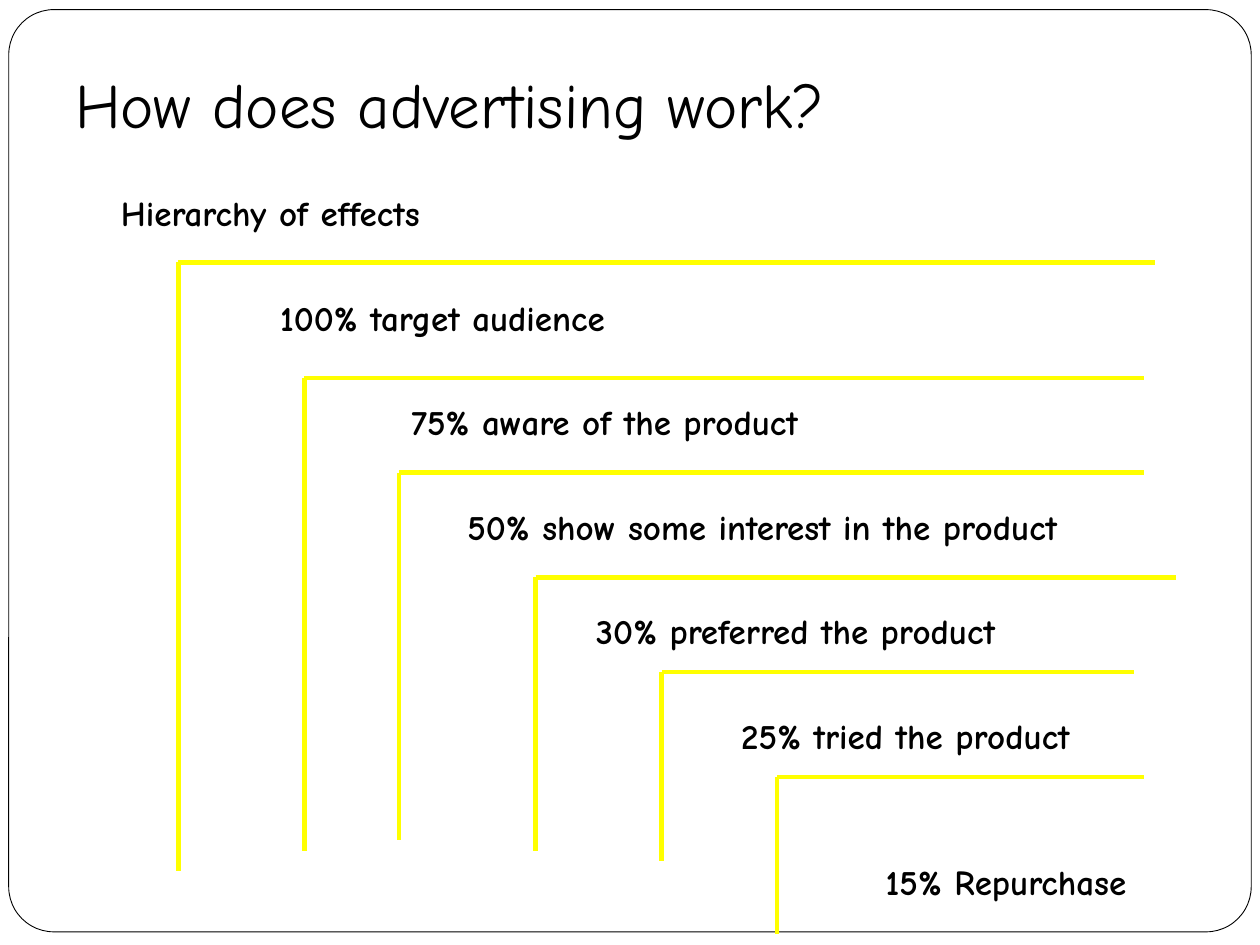
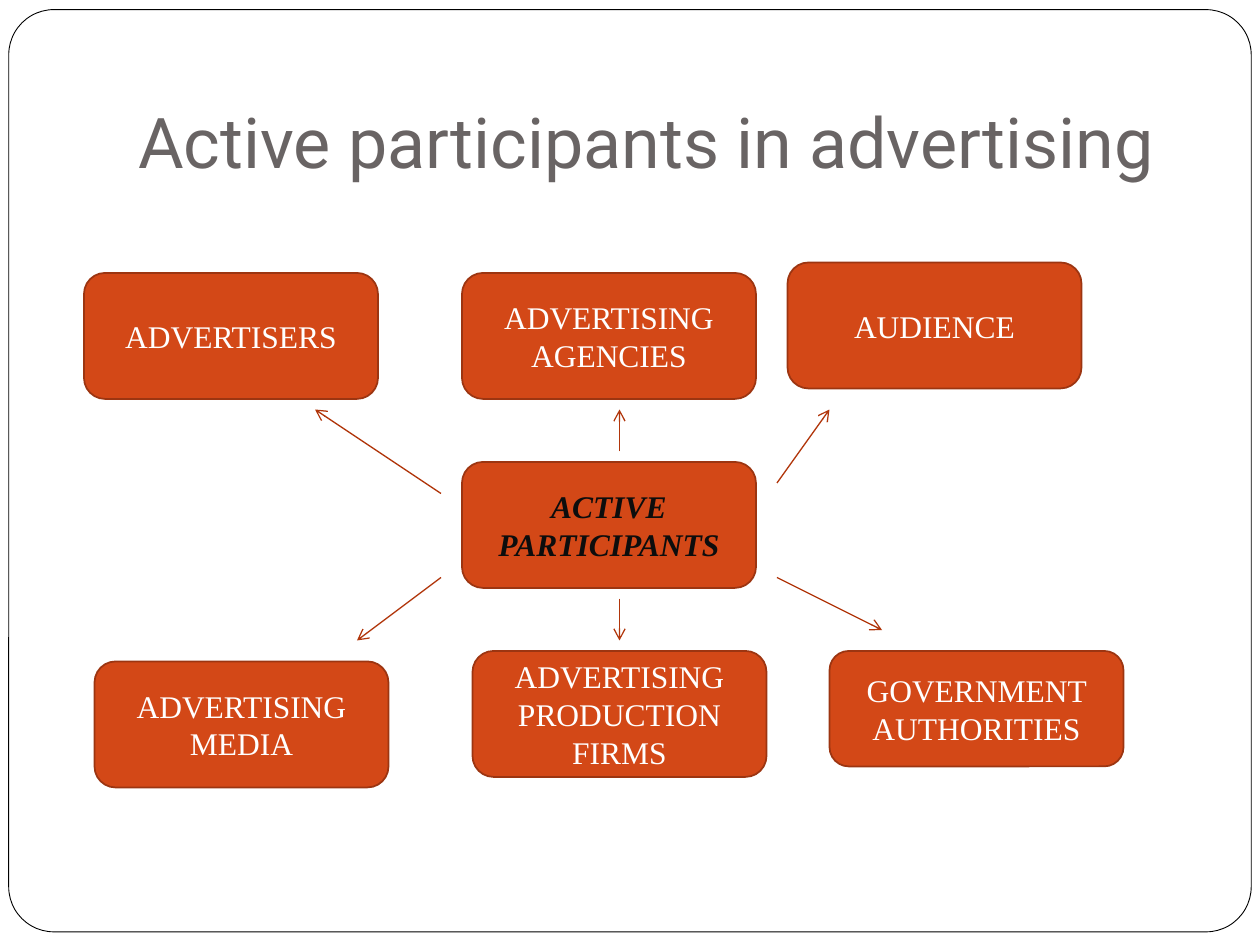
"""Build two slides on how advertising works and who takes part in it."""
from dataclasses import dataclass

from lxml import etree
from pptx import Presentation
from pptx.dml.color import RGBColor
from pptx.enum.shapes import MSO_CONNECTOR, MSO_SHAPE
from pptx.enum.text import MSO_ANCHOR, PP_ALIGN
from pptx.oxml.ns import qn
from pptx.shapes.autoshape import Shape
from pptx.shapes.connector import Connector
from pptx.slide import Slide
from pptx.text.text import Font
from pptx.util import Pt

STRAIGHT = MSO_CONNECTOR.STRAIGHT
ROUNDED = MSO_SHAPE.ROUNDED_RECTANGLE
BOTTOM, MIDDLE = MSO_ANCHOR.BOTTOM, MSO_ANCHOR.MIDDLE
CENTER = PP_ALIGN.CENTER


@dataclass(frozen=True)
class Theme:
    """Colours, fonts and type sizes of both slides."""
    paper: str = "FFFFFF"
    ink: str = "000000"
    heading: str = "696464"
    step: str = "FFFF00"
    box: str = "D34817"
    box_edge: str = "9C3511"
    arrow: str = "B1360B"
    hub_text: str = "0D0D0D"
    hand_font: str = "Comic Neue"
    heading_font: str = "Roboto"
    box_font: str = "Times New Roman"
    hand_title_size: float = 36
    heading_size: float = 40
    stage_size: float = 20
    box_size: float = 18


@dataclass(frozen=True)
class Stage:
    """A line of the hierarchy: wording, indent and gap above."""
    text: str
    indent: float
    gap: float = 35.7


@dataclass(frozen=True)
class Step:
    """A corner with a riser going down and a tread going right."""
    left: float
    top: float
    right: float
    bottom: float


@dataclass(frozen=True)
class Participant:
    """A box of the participants diagram."""
    text: str
    left: float
    top: float
    height: float = 72


@dataclass(frozen=True)
class Arrow:
    """An arrow from the hub towards a participant."""
    x1: float
    y1: float
    x2: float
    y2: float


THEME = Theme()
SLIDE_WIDTH, SLIDE_HEIGHT = 720, 540
BOX_WIDTH = 168
STAGE_LINE = 24

STAGES = (
    Stage("Hierarchy of effects", 5, 0),
    Stage("100% target audience", 96),
    Stage("75% aware of the product", 171),
    Stage("50% show some interest in the product", 203),
    Stage("30% preferred the product", 276.5),
    Stage("25% tried the product", 359.5),
    Stage("15% Repurchase", 442, 59.4),
)
STEPS = (
    Step(102, 150, 660, 498),
    Step(174, 216, 654, 486),
    Step(228, 270, 654, 480),
    Step(306, 330, 672, 486),
    Step(378, 384, 648, 492),
    Step(444, 444, 654, 534),
)
HUB = Participant("ACTIVE PARTICIPANTS", 264, 264)
PARTICIPANTS = (
    Participant("ADVERTISERS", 48, 156),
    Participant("ADVERTISING AGENCIES", 264, 156),
    Participant("AUDIENCE", 450, 150),
    Participant("ADVERTISING MEDIA", 54, 378),
    Participant("ADVERTISING PRODUCTION FIRMS", 270, 372),
    Participant("GOVERNMENT AUTHORITIES", 474, 372, 66),
)
ARROWS = (
    Arrow(252, 282, 180, 234),
    Arrow(354, 258, 354, 234),
    Arrow(444, 276, 474, 234),
    Arrow(252, 330, 204, 366),
    Arrow(354, 342, 354, 366),
    Arrow(444, 330, 504, 360),
)


def rgb(value: str) -> RGBColor:
    """Turn a hex value into a colour."""
    return RGBColor.from_string(value)


def style(font: Font, name: str, size: float, color: str, bold: bool = False, italic: bool = False) -> None:
    """Set every property of a font."""
    font.name, font.size = name, Pt(size)
    font.bold, font.italic = bold, italic
    font.color.rgb = rgb(color)


def add_rounded(slide: Slide, left: float, top: float, width: float, height: float,
                fill: str, edge: str, edge_width: float) -> Shape:
    """Draw a flat rounded rectangle."""
    panel = slide.shapes.add_shape(ROUNDED, Pt(left), Pt(top), Pt(width), Pt(height))
    panel.shadow.inherit = False
    panel.fill.solid()
    panel.fill.fore_color.rgb = rgb(fill)
    panel.line.color.rgb = rgb(edge)
    panel.line.width = Pt(edge_width)
    return panel


def add_line(slide: Slide, x1: float, y1: float, x2: float, y2: float, color: str, width: float) -> Connector:
    """Draw a straight line without a shadow."""
    line = slide.shapes.add_connector(STRAIGHT, Pt(x1), Pt(y1), Pt(x2), Pt(y2))
    line.line.color.rgb = rgb(color)
    line.line.width = Pt(width)
    etree.SubElement(line._element.spPr, qn("a:effectLst"))
    return line


def add_framed_slide(prs: Presentation) -> Slide:
    """Add a blank slide with the thin rounded frame."""
    slide = prs.slides.add_slide(prs.slide_layouts[6])
    frame = add_rounded(slide, 5, 5.5, 710, 527, THEME.paper, THEME.ink, 0.5)
    frame.adjustments[0] = 0.049
    return slide


def add_text_area(slide: Slide, left: float, top: float, width: float, height: float) -> Shape:
    """Add a wrapping text box."""
    area = slide.shapes.add_textbox(Pt(left), Pt(top), Pt(width), Pt(height))
    area.text_frame.word_wrap = True
    return area


def add_title(slide: Slide, text: str, left: float, top: float, width: float, height: float,
              font: str, size: float, color: str, bottom_inset: float) -> None:
    """Write a title that stands on the bottom of its area."""
    frame = add_text_area(slide, left, top, width, height).text_frame
    frame.vertical_anchor = BOTTOM
    frame.margin_bottom = Pt(bottom_inset)
    frame.text = text
    style(frame.paragraphs[0].runs[0].font, font, size, color)


def add_stages(slide: Slide) -> None:
    """Write the stages as one text with growing indents."""
    frame = add_text_area(slide, 57, 106, 612, 420).text_frame
    frame.text = "\n".join(stage.text for stage in STAGES)
    for stage, paragraph in zip(STAGES, frame.paragraphs):
        paragraph.line_spacing = Pt(STAGE_LINE)
        paragraph.space_before = Pt(stage.gap)
        paragraph._p.get_or_add_pPr().set("marL", str(Pt(stage.indent)))
        style(paragraph.runs[0].font, THEME.hand_font, THEME.stage_size, THEME.ink, bold=True)


def add_step(slide: Slide, step: Step) -> None:
    """Draw the riser and the tread of a step."""
    for x, y in ((step.left, step.bottom), (step.right, step.top)):
        add_line(slide, step.left, step.top, x, y, THEME.step, 2.5)


def add_participant(slide: Slide, participant: Participant, is_hub: bool = False) -> None:
    """Draw a participant box with its centred name."""
    box = add_rounded(slide, participant.left, participant.top, BOX_WIDTH, participant.height,
                      THEME.box, THEME.box_edge, 1)
    frame = box.text_frame
    frame.word_wrap = True
    frame.vertical_anchor = MIDDLE
    frame.text = participant.text
    paragraph = frame.paragraphs[0]
    paragraph.alignment = CENTER
    color = THEME.hub_text if is_hub else THEME.paper
    style(paragraph.runs[0].font, THEME.box_font, THEME.box_size, color, is_hub, is_hub)


def add_arrow(slide: Slide, arrow: Arrow) -> None:
    """Draw an arrow with an open head at its end."""
    line = add_line(slide, arrow.x1, arrow.y1, arrow.x2, arrow.y2, THEME.arrow, 0.75)
    etree.SubElement(line.line._get_or_add_ln(), qn("a:tailEnd"), type="arrow")


def build_hierarchy(prs: Presentation) -> None:
    """Build the slide with the hierarchy of effects."""
    slide = add_framed_slide(prs)
    add_stages(slide)
    add_title(slide, "How does advertising work?", 36, 34, 684, 50,
              THEME.hand_font, THEME.hand_title_size, THEME.ink, 3.6)
    for step in STEPS:
        add_step(slide, step)


def build_participants(prs: Presentation) -> None:
    """Build the slide with the participants diagram."""
    slide = add_framed_slide(prs)
    add_title(slide, "Active participants in advertising", 72, 21.6, 612, 90,
              THEME.heading_font, THEME.heading_size, THEME.heading, 7.2)
    add_participant(slide, HUB, is_hub=True)
    for participant in PARTICIPANTS:
        add_participant(slide, participant)
    for arrow in ARROWS:
        add_arrow(slide, arrow)


def main() -> None:
    """Build and save the presentation."""
    prs = Presentation()
    prs.slide_width, prs.slide_height = Pt(SLIDE_WIDTH), Pt(SLIDE_HEIGHT)
    build_hierarchy(prs)
    build_participants(prs)
    prs.save("out.pptx")


if __name__ == "__main__":
    main()
